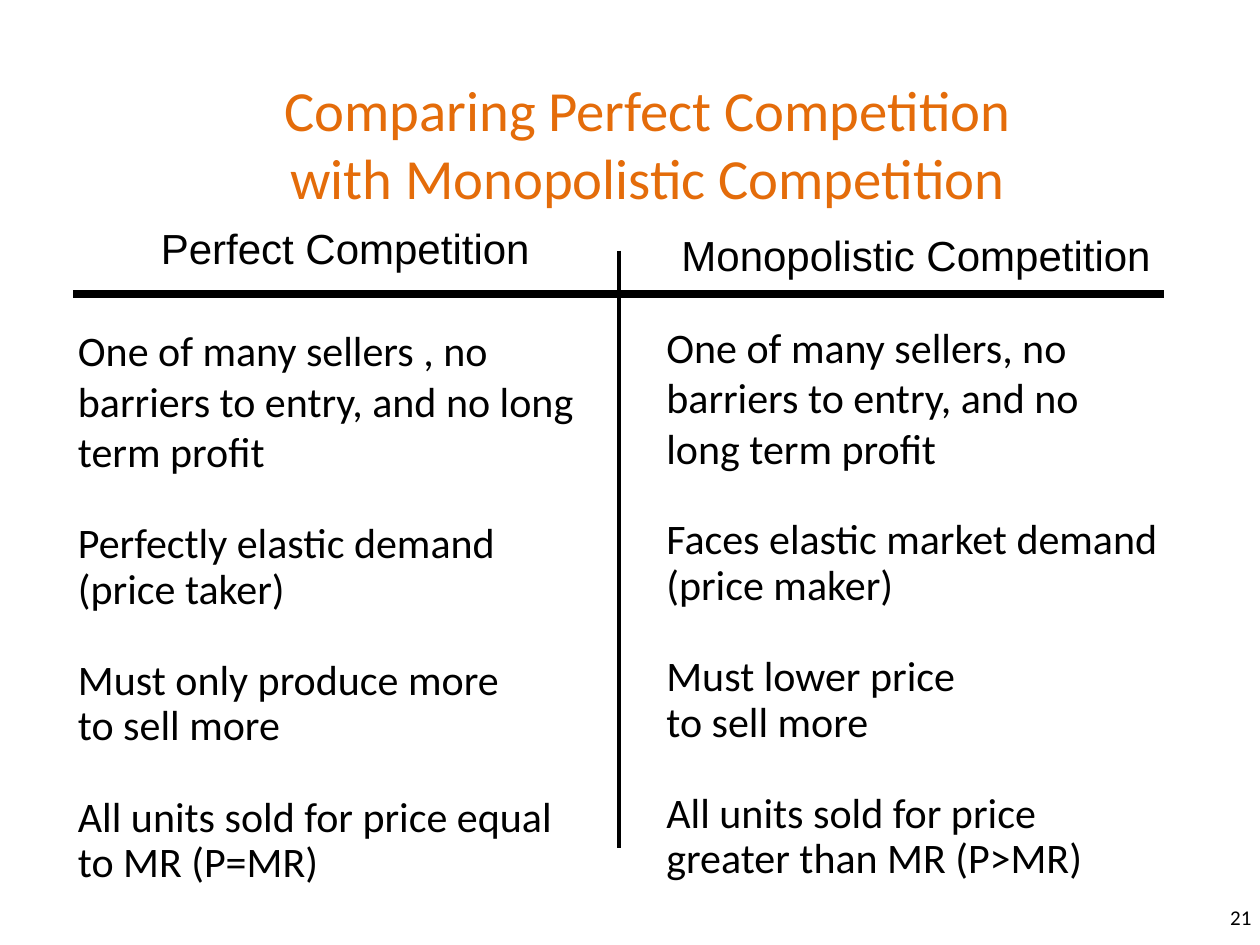
from dataclasses import dataclass

import lxml.etree
import pptx
import pptx.dml.color
import pptx.enum.shapes
import pptx.enum.text
import pptx.oxml.ns
import pptx.util

Inches = pptx.util.Inches
Pt = pptx.util.Pt
Align = pptx.enum.text.PP_ALIGN
Anchor = pptx.enum.text.MSO_ANCHOR


@dataclass(frozen=True)
class Theme:
    ink: str = "000000"
    accent: str = "E46C0A"
    background: str = "FFFFFF"
    body_font: str = "Calibri"
    heading_font: str = "Arial"
    title_size: float = 32.4
    text_size: float = 24
    number_size: float = 12
    point_spacing: float = 0.9
    point_gap: float = 26.4


@dataclass(frozen=True)
class Area:
    left: float
    top: float
    width: float
    height: float


@dataclass(frozen=True)
class Column:
    heading: str
    heading_area: Area
    points: tuple[str, ...]
    points_area: Area


@dataclass(frozen=True)
class Rule:
    start: tuple[float, float]
    end: tuple[float, float]
    weight: float


THEME = Theme()

COLUMNS = (
    Column(
        "Perfect Competition",
        Area(0.58, 1.72, 4.32, 0.5),
        (
            "One of many sellers , no barriers to entry, and no long term profit",
            "Perfectly elastic demand (price taker)",
            "Must only produce more\nto sell more",
            "All units sold for price equal to MR (P=MR)",
        ),
        Area(0.52, 2.53, 4.22, 4.59),
    ),
    Column(
        "Monopolistic Competition",
        Area(5.16, 1.77, 4.22, 0.5),
        (
            "One of many sellers, no barriers to entry, and no long term profit",
            "Faces elastic market demand (price maker)",
            "Must lower price\nto sell more",
            "All units sold for price greater than MR (P>MR)",
        ),
        Area(5.19, 2.5, 4.11, 4.58),
    ),
)

RULES = (
    Rule((0.58, 2.33), (9.24, 2.33), 4.5),
    Rule((4.91, 1.99), (4.91, 6.73), 2.25),
)


def color(value: str) -> pptx.dml.color.RGBColor:
    return pptx.dml.color.RGBColor.from_string(value)


def add_text(page, area: Area, *texts: str, font: str = THEME.body_font,
             size: float = THEME.text_size, ink: str = THEME.ink,
             align=Align.LEFT, anchor=Anchor.TOP) -> None:
    box = page.shapes.add_textbox(Inches(area.left), Inches(area.top),
                                  Inches(area.width), Inches(area.height))
    frame = box.text_frame
    frame.word_wrap = True
    frame.vertical_anchor = anchor
    for index, text in enumerate(texts):
        para = frame.add_paragraph() if index else frame.paragraphs[0]
        para.text = text
        para.alignment = align
        if index:
            para.line_spacing = THEME.point_spacing
            para.space_before = Pt(THEME.point_gap)
        for span in para.runs:
            span.font.name = font
            span.font.size = Pt(size)
            span.font.color.rgb = color(ink)


def add_rule(page, rule: Rule) -> None:
    connector = page.shapes.add_connector(
        pptx.enum.shapes.MSO_CONNECTOR.STRAIGHT,
        *map(Inches, rule.start + rule.end))
    connector.line.color.rgb = color(THEME.ink)
    connector.line.width = Pt(rule.weight)
    properties = connector._element.spPr
    lxml.etree.SubElement(properties, pptx.oxml.ns.qn("a:effectLst"))


def add_column(page, column: Column) -> None:
    add_text(page, column.heading_area, column.heading,
             font=THEME.heading_font, align=Align.CENTER)
    add_text(page, column.points_area, *column.points)


def main() -> None:
    deck = pptx.Presentation()
    deck.slide_width = Inches(10)
    deck.slide_height = Inches(7.5)
    page = deck.slides.add_slide(deck.slide_layouts[6])
    page.background.fill.solid()
    page.background.fill.fore_color.rgb = color(THEME.background)

    add_text(page, Area(6.11, 7.08, 3.92, 0.4), "21", size=THEME.number_size,
             align=Align.RIGHT, anchor=Anchor.MIDDLE)
    add_text(page, Area(0.64, 0.6, 9, 1.07),
             "Comparing Perfect Competition\nwith Monopolistic Competition",
             size=THEME.title_size, ink=THEME.accent,
             align=Align.CENTER, anchor=Anchor.MIDDLE)
    for rule in RULES:
        add_rule(page, rule)
    for column in COLUMNS:
        add_column(page, column)
    deck.save("out.pptx")


if __name__ == "__main__":
    main()
